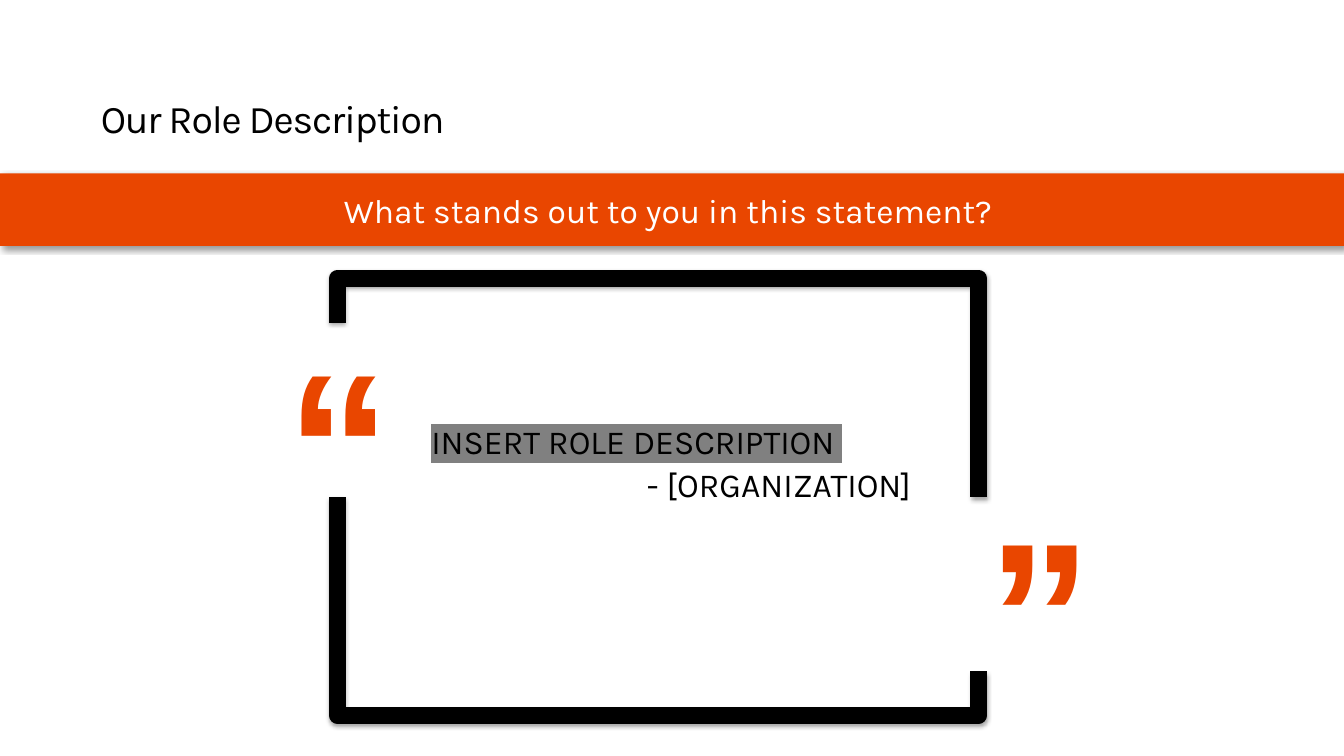
from dataclasses import dataclass

from lxml import etree
from pptx import Presentation
from pptx import util as u
from pptx.dml.color import RGBColor
from pptx.enum import shapes, text
from pptx.oxml import ns


@dataclass(frozen=True)
class Theme:
    ink: str = "000000"
    accent: str = "E94600"
    paper: str = "FFFFFF"
    highlight: str = "808080"
    body_font: str = "Karla"
    mark_font: str = "Arial"
    title_size: float = 28
    body_size: float = 24
    mark_size: float = 150
    frame_line: float = 12


THEME = Theme()


def rgb(colour):
    return RGBColor.from_string(colour)


def style(paragraph, size, colour, font=THEME.body_font, bold=False):
    for run in paragraph.runs:
        run.font.size = u.Pt(size)
        run.font.name = font
        run.font.bold = bold
        run.font.color.rgb = rgb(colour)


def add_shadow(shape, alpha, blur, distance, angle):
    shape.shadow.inherit = False
    effects = shape._element.spPr.find(ns.qn("a:effectLst"))
    shadow = etree.SubElement(
        effects, ns.qn("a:outerShdw"),
        blurRad=str(u.Pt(blur)), dist=str(u.Pt(distance)),
        dir=str(angle * 60000), algn="ctr", rotWithShape="0")
    colour = etree.SubElement(shadow, ns.qn("a:srgbClr"), val=THEME.ink)
    etree.SubElement(colour, ns.qn("a:alpha"), val=str(alpha * 1000))


def add_text_box(slide, box, anchor, margins=None):
    frame = slide.shapes.add_textbox(*map(u.Cm, box)).text_frame
    frame.word_wrap = True
    frame.vertical_anchor = anchor
    if margins:
        (frame.margin_left, frame.margin_top,
         frame.margin_right, frame.margin_bottom) = map(u.Cm, margins)
    return frame


def add_title(slide, box):
    frame = add_text_box(slide, box, text.MSO_ANCHOR.BOTTOM, (0, 0.13, 0, 0))
    frame.text = "Our Role Description"
    title = frame.paragraphs[0]
    title.line_spacing = 0.9
    style(title, THEME.title_size, THEME.ink)
    title.runs[0].font._element.set("spc", "-80")


def add_question_band(slide, box):
    band = slide.shapes.add_shape(
        shapes.MSO_SHAPE.RECTANGLE, *map(u.Cm, box))
    band.fill.solid()
    band.fill.fore_color.rgb = rgb(THEME.accent)
    band.line.fill.background()
    add_shadow(band, 40, 4, 3, 45)
    frame = band.text_frame
    frame.vertical_anchor = text.MSO_ANCHOR.MIDDLE
    frame.text = "What stands out to you in this statement? "
    question = frame.paragraphs[0]
    question.alignment = text.PP_ALIGN.CENTER
    style(question, THEME.body_size, THEME.paper)


def add_statement(slide, box):
    frame = add_text_box(slide, box, text.MSO_ANCHOR.MIDDLE, (0, 0, 0, 0))
    frame.text = "INSERT ROLE DESCRIPTION \n- [ORGANIZATION]"
    statement, source = frame.paragraphs
    source.alignment = text.PP_ALIGN.RIGHT
    source.space_before = u.Pt(2)
    for paragraph in frame.paragraphs:
        style(paragraph, THEME.body_size, THEME.ink)
    highlight = etree.Element(ns.qn("a:highlight"))
    etree.SubElement(highlight, ns.qn("a:srgbClr"), val=THEME.highlight)
    properties = statement.runs[0].font._element
    properties.find(ns.qn("a:solidFill")).addnext(highlight)


def add_quote_mark(slide, box, mark):
    frame = add_text_box(slide, box, text.MSO_ANCHOR.TOP)
    frame.text = mark
    style(frame.paragraphs[0], THEME.mark_size, THEME.accent,
          THEME.mark_font, True)


def add_frame_half(slide, points):
    start, *rest = [(u.Cm(x), u.Cm(y)) for x, y in points]
    builder = slide.shapes.build_freeform(*start)
    builder.add_line_segments(rest, close=False)
    half = builder.convert_to_shape()
    half.fill.background()
    half.line.color.rgb = rgb(THEME.ink)
    half.line.width = u.Pt(THEME.frame_line)
    etree.SubElement(half.line._get_or_add_ln(), ns.qn("a:round"))
    add_shadow(half, 35, 3.1, 1.8, 90)


def add_quote_frame(slide, box):
    left, top, width, height = box
    right, bottom = left + width, top + height
    stub = 1.12
    upper = [(left, top + stub), (left, top), (right, top),
             (right, top + height / 2)]
    lower = [(left + right - x, top + bottom - y) for x, y in upper]
    mark_width, mark_height = 2.03, 6.68
    add_statement(slide, (left + 2.36, top + 3.58, 12.09, 2.13))
    add_quote_mark(
        slide, (left - 1.55, top + 0.71, mark_width, mark_height), "“")
    add_quote_mark(
        slide, (right - 0.02, top + 4.98, mark_width, mark_height), "”")
    for half in (upper, lower):
        add_frame_half(slide, half)


def main():
    deck = Presentation()
    deck.slide_width, deck.slide_height = u.Cm(33.87), u.Cm(19.05)
    slide = deck.slides.add_slide(deck.slide_layouts[6])
    add_title(slide, (2.54, 1.93, 28.78, 1.65))
    add_question_band(slide, (0, 4.37, 33.87, 1.83))
    add_quote_frame(slide, (8.51, 7.01, 16.15, 11.02))
    deck.save("out.pptx")


if __name__ == "__main__":
    main()
